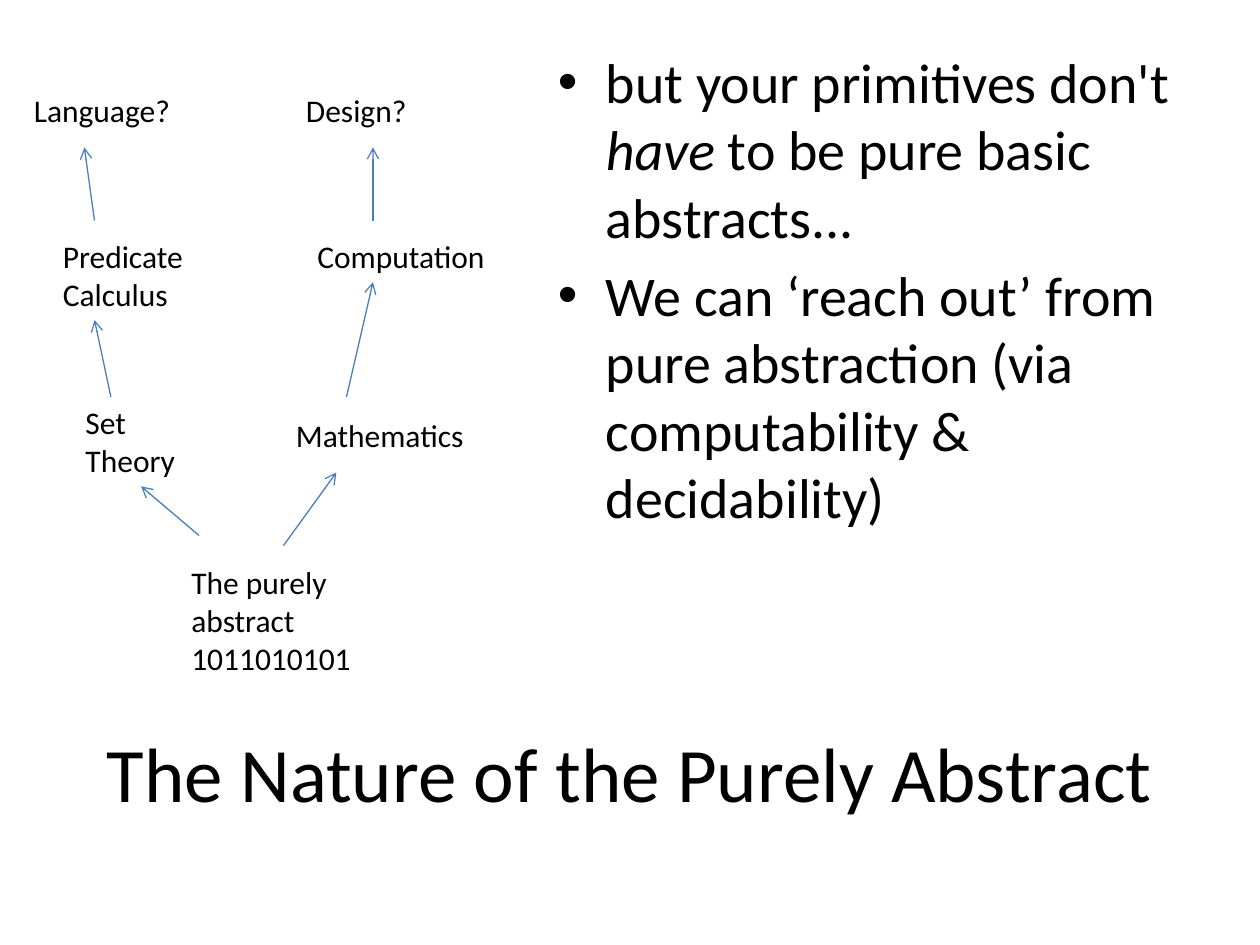
from pptx import Presentation
from pptx.dml.color import RGBColor
from pptx.enum.shapes import MSO_CONNECTOR
from pptx.enum.text import MSO_ANCHOR, MSO_AUTO_SIZE, PP_ALIGN
from pptx.oxml.ns import qn
from pptx.util import Inches, Pt
from lxml.etree import SubElement

FONT = "Calibri"
BLACK = "000000"
ARROW_BLUE = "4B7EBC"
BOTTOM = 2  # connection site

# Ideas of the tree: text, left, top, width, height
IDEAS = [
    ("The purely abstract\n1011010101", 1.42, 4.42, 1.83, 1.01),
    ("Set Theory", 0.58, 3.15, 1.08, 0.71),
    ("Mathematics", 2.25, 3.25, 1.58, 0.4),
    ("Computation", 2.42, 1.83, 1.62, 0.4),
    ("Predicate Calculus", 0.4, 1.83, 1.42, 0.71),
    ("Language?", 0.17, 0.67, 1.42, 0.4),
    ("Design?", 2.33, 0.67, 1.25, 0.4),
]

# Steps between ideas: start point, end point, idea joined at the end
STEPS = [
    ((2.25, 4.33), (2.67, 3.75), None),
    ((1.58, 4.25), (1.12, 3.86), "Set Theory"),
    ((2.75, 3.15), (2.96, 2.24), None),
    ((0.88, 3.15), (0.75, 2.54), None),
    ((0.75, 1.75), (0.67, 1.17), None),
    ((2.96, 1.75), (2.96, 1.17), None),
]

# Each point is a list of (text, italic) runs
POINTS = [
    [("but your primitives don't ", False), ("have", True),
     (" to be pure basic abstracts...", False)],
    [("We can ‘reach out’ from pure abstraction "
      "(via computability & decidability)", False)],
]


def color(hex_string):
    return RGBColor.from_string(hex_string)


def add_run(paragraph, text, size=18, italic=False, hex_color=BLACK):
    run = paragraph.add_run()
    run.text = text
    run.font.name = FONT
    run.font.size = Pt(size)
    run.font.italic = italic
    run.font.color.rgb = color(hex_color)


def set_title(slide, text):
    title = slide.shapes.title
    title.left, title.top = Inches(0.5), Inches(5.5)
    title.width, title.height = Inches(9), Inches(1.25)
    title.text_frame.vertical_anchor = MSO_ANCHOR.MIDDLE
    paragraph = title.text_frame.paragraphs[0]
    paragraph.alignment = PP_ALIGN.CENTER
    add_run(paragraph, text, size=44)


def add_text_box(slide, left, top, width, height):
    box = slide.shapes.add_textbox(*map(Inches, (left, top, width, height)))
    box.text_frame.word_wrap = True
    return box


def add_idea(slide, text, *place):
    idea = add_text_box(slide, *place)
    frame = idea.text_frame
    frame.auto_size = MSO_AUTO_SIZE.SHAPE_TO_FIT_TEXT
    for number, line in enumerate(text.split("\n")):
        paragraph = frame.add_paragraph() if number else frame.paragraphs[0]
        add_run(paragraph, line)
    return idea


def add_bullets(slide, points, *place, size=32):
    frame = add_text_box(slide, *place).text_frame
    for number, runs in enumerate(points):
        paragraph = frame.add_paragraph() if number else frame.paragraphs[0]
        if number:
            paragraph.space_before = Pt(size * 0.2)
        properties = paragraph._p.get_or_add_pPr()
        properties.set("marL", str(Inches(0.38)))
        properties.set("indent", str(-Inches(0.38)))
        SubElement(properties, qn("a:buFont"), typeface="Arial")
        SubElement(properties, qn("a:buChar"), char="•")
        for text, italic in runs:
            add_run(paragraph, text, size=size, italic=italic)


def add_arrow(slide, start, end, target=None):
    arrow = slide.shapes.add_connector(
        MSO_CONNECTOR.STRAIGHT, *map(Inches, start + end))
    if target is not None:
        arrow.end_connect(target, BOTTOM)
    arrow.line.color.rgb = color(ARROW_BLUE)
    arrow.line.width = Pt(0.75)
    SubElement(arrow.line._get_or_add_ln(), qn("a:tailEnd"), type="arrow")
    SubElement(arrow._element.spPr, qn("a:effectLst"))


def main():
    presentation = Presentation()
    presentation.slide_width = Inches(10)
    presentation.slide_height = Inches(7.5)
    slide = presentation.slides.add_slide(presentation.slide_layouts[5])

    # Title and argument
    set_title(slide, "The Nature of the Purely Abstract")
    add_bullets(slide, POINTS, 4.33, 0.33, 5.17, 4.95)

    # Tree growing up from the purely abstract
    ideas = {text: add_idea(slide, text, *place) for text, *place in IDEAS}
    for start, end, joined in STEPS:
        add_arrow(slide, start, end, ideas.get(joined))

    presentation.save("out.pptx")


if __name__ == "__main__":
    main()
